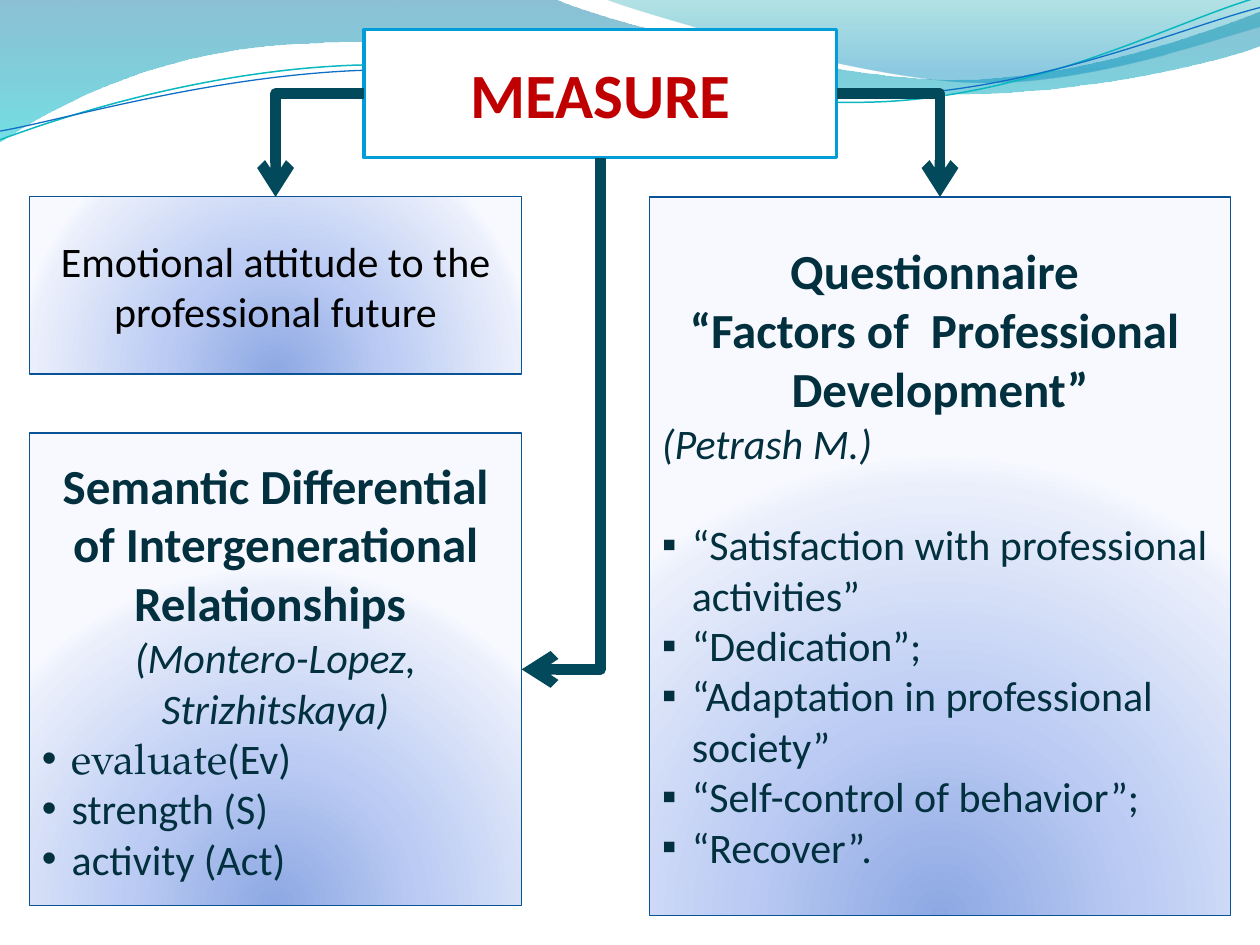
import pptx
import pptx.util
import pptx.oxml
import pptx.oxml.ns
import pptx.dml.color
import pptx.enum.shapes
import pptx.enum.text
from lxml import etree

Pt = pptx.util.Pt
qn = pptx.oxml.ns.qn
Align = pptx.enum.text.PP_ALIGN
NS = "http://schemas.openxmlformats.org/drawingml/2006/main"

COLORS = {
    "black": "000000", "white": "FFFFFF", "ink": "02303E", "red": "C00000",
    "edge": "095295", "frame": "009DD9", "arrow": "03495C",
    "teal": "0AB8BF", "blue": "0F6FC6",
}
# Gradient stops: place %, colour, opacity %
GLOW = [(0, "8DA8E3", 100), (43, "BBCBF3", 100),
        (93, "EAEFFB", 100), (100, "F7F9FF", 100)]
DEEP = [(0, "0074A1", 45), (100, "00C6CF", 55)]
PALE = [(0, "00A1A9", 30), (80, "008BBF", 45)]
DOWN = '<a:lin ang="5400000" scaled="0"/>'
ROUND = ('<a:path path="circle"><a:fillToRect l="50000" t="130000" '
         'r="50000" b="-30000"/></a:path>')

# Outlines: start point, then steps of one point (line) or three (curve)
BAND = [[(0, 0)], [(316.8, -0.7)],
        [(342.7, 12.2), (478.1, 45.4), (545.8, 45.4)],
        [(614.2, 45.4), (689.8, 18.7), (720, 6.5)], [(720.7, 25.9)],
        [(707.8, 31.7), (626.4, 54.7), (537.1, 54)],
        [(447.8, 54), (275, 20.2), (185, 24.5)],
        [(92.9, 25.9), (33.1, 59.8), (-0.7, 81.4)], [(0, 0)]]
CREST = [[(344.9, -0.7)], [(366.5, 7.9), (491, 44.6), (553.7, 46.8)],
         [(616.3, 49.7), (691.9, 23), (720, 15.1)], [(720, 0)],
         [(344.9, -0.7)]]
UPPER = [[(0, 79.9)], [(34.6, 67), (113.8, 41), (199.4, 37.4)],
         [(284.4, 33.8), (427, 64.1), (513.4, 57.6)],
         [(599.8, 51.1), (675.4, 10.8), (718.6, -1.4)]]
LOWER = [[(0, 74.9)], [(33.8, 69.1), (118.1, 43.9), (203.8, 40.3)],
         [(290.2, 36.7), (429.8, 60.5), (516.2, 54)],
         [(601.9, 48.2), (677.5, 15.1), (720, 4.3)]]


def rgb(name):
    return pptx.dml.color.RGBColor.from_string(COLORS[name])


def set_line(shape, color, width):
    shape.line.color.rgb = rgb(color)
    shape.line.width = Pt(width)


def set_grad(shape, stops, way):
    """Fill a shape with a gradient that may be partly clear."""
    marks = "".join(
        f'<a:gs pos="{pos * 1000}"><a:srgbClr val="{color}">'
        f'<a:alpha val="{alpha * 1000}"/></a:srgbClr></a:gs>'
        for pos, color, alpha in stops)
    shape.fill.gradient()
    props = shape.element.spPr
    props.replace(props.find(qn("a:gradFill")), pptx.oxml.parse_xml(
        f'<a:gradFill xmlns:a="{NS}" rotWithShape="1">'
        f'<a:gsLst>{marks}</a:gsLst>{way}</a:gradFill>'))


def add_wave(slide, steps, closed):
    """Draw an outline, then bend each step of three points to a curve."""
    start, *rest = [(Pt(x), Pt(y)) for step in steps for x, y in step]
    pen = slide.shapes.build_freeform(*start)
    pen.add_line_segments(rest, close=closed)
    wave = pen.convert_to_shape()
    wave.shadow.inherit = False
    lines = wave.element.spPr.iter(qn("a:lnTo"))
    lines = iter(list(lines))
    for step in steps[1:]:
        group = [next(lines) for _ in step]
        if len(group) == 3:
            home = group[0].getparent()
            curve = etree.Element(qn("a:cubicBezTo"))
            home.insert(home.index(group[0]), curve)
            for line in group:
                curve.append(line[0])
                home.remove(line)
    return wave


def add_area(slide, steps, stops):
    wave = add_wave(slide, steps, True)
    set_grad(wave, stops, DOWN)
    wave.line.fill.background()


def add_curve(slide, steps, color, width):
    wave = add_wave(slide, steps, False)
    wave.fill.background()
    set_line(wave, color, width)


def add_box(slide, left, top, width, height):
    box = slide.shapes.add_shape(
        pptx.enum.shapes.MSO_SHAPE.RECTANGLE,
        Pt(left), Pt(top), Pt(width), Pt(height))
    box.shadow.inherit = False
    box.text_frame.word_wrap = True
    box.text_frame.vertical_anchor = pptx.enum.text.MSO_ANCHOR.MIDDLE
    return box


def add_card(slide, *place):
    box = add_box(slide, *place)
    set_grad(box, GLOW, ROUND)
    set_line(box, "edge", 0.75)
    return box


def add_run(par, text, size=24, color="ink", bold=False, italic=False,
            face="Calibri"):
    run = par.add_run()
    run.text = text
    font = run.font
    font.size, font.bold, font.italic = Pt(size), bold, italic
    font.name = face
    font.color.rgb = rgb(color)


def add_par(box, text, align=Align.CENTER, **style):
    frame = box.text_frame
    par = frame.paragraphs[0]
    if par.runs:
        par = frame.add_paragraph()
    par.alignment = align
    add_run(par, text, **style)
    return par


def add_item(box, mark, text, **style):
    par = add_par(box, text, Align.LEFT, **style)
    props = par._p.get_or_add_pPr()
    props.set("marL", str(Pt(17)))
    props.set("indent", str(-Pt(17)))
    etree.SubElement(props, qn("a:buFont")).set("typeface", "Arial")
    etree.SubElement(props, qn("a:buChar")).set("char", mark)
    return par


def add_arrow(slide, start, side, end, goal, turn=False):
    """Join two boxes with a one-bend arrow; turn it to leave downwards."""
    link = slide.shapes.add_connector(
        pptx.enum.shapes.MSO_CONNECTOR.ELBOW, 0, 0, 0, 0)
    link.begin_connect(start, side)
    link.end_connect(end, goal)
    props = link.element.spPr
    props.find(qn("a:prstGeom")).set("prst", "bentConnector2")
    if turn:
        wide, high = link.width, link.height
        link.left += (wide - high) // 2
        link.top += (high - wide) // 2
        link.width, link.height = high, wide
        frame = props.find(qn("a:xfrm"))
        frame.set("rot", "5400000")
        frame.set("flipH", "0")
    set_line(link, "arrow", 6)
    line = props.find(qn("a:ln"))
    etree.SubElement(line, qn("a:round"))
    etree.SubElement(line, qn("a:tailEnd")).set("type", "arrow")
    etree.SubElement(props, qn("a:effectLst"))


def main():
    deck = pptx.Presentation()
    deck.slide_width, deck.slide_height = Pt(720), Pt(540)
    slide = deck.slides.add_slide(deck.slide_layouts[6])

    # Waves along the top
    add_area(slide, BAND, DEEP)
    add_area(slide, CREST, PALE)
    add_curve(slide, UPPER, "teal", 0.85)
    add_curve(slide, LOWER, "blue", 0.75)

    # Attitude
    mood = add_card(slide, 16.9, 112.5, 281.2, 101.2)
    add_par(mood, "Emotional attitude to the professional future",
            color="black")

    # Questionnaire
    form = add_card(slide, 371.2, 112.5, 331.9, 410.6)
    for text in ("Questionnaire ", "“Factors of  Professional  Development”"):
        add_par(form, text, size=28, bold=True)
    add_par(form, "(Petrash M.)", Align.LEFT, italic=True)
    items = [add_item(form, "▪", text) for text in (
        "“Satisfaction with professional activities”", "“Dedication”;",
        "“Adaptation in professional society”",
        "“Self-control of behavior”;", "“Recover”.")]
    items[0].space_before = Pt(29)

    # Semantic differential
    scale = add_card(slide, 16.9, 247.5, 281.2, 270)
    add_par(scale, "Semantic Differential of Intergenerational Relationships ",
            size=28, bold=True)
    add_par(scale, "(Montero-Lopez, Strizhitskaya)", italic=True)
    first = add_item(scale, "•", "evaluate", face="TeX Gyre Pagella")
    add_run(first, "(Ev)")
    for text in ("strength (S)", "activity (Act)"):
        add_item(scale, "•", text)

    # Title
    title = add_box(slide, 208.1, 16.9, 270, 73.1)
    title.fill.solid()
    title.fill.fore_color.rgb = rgb("white")
    set_line(title, "frame", 2)
    add_par(title, "MEASURE", size=36, color="red", bold=True)

    # Arrows from the title
    add_arrow(slide, title, 1, mood, 0)
    add_arrow(slide, title, 3, form, 0)
    add_arrow(slide, title, 2, scale, 3, turn=True)

    deck.save("out.pptx")


if __name__ == "__main__":
    main()
